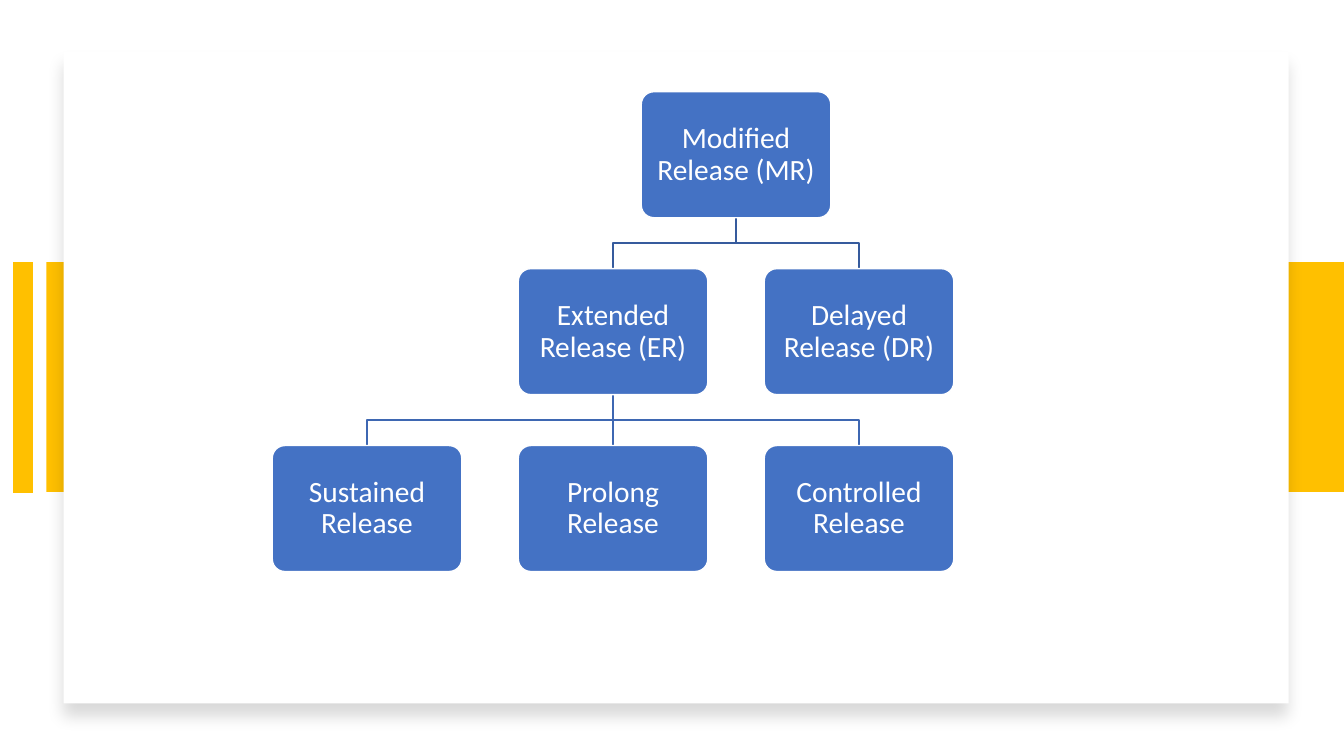
import pptx
import pptx.util
import pptx.dml.color
import pptx.enum.shapes
import pptx.enum.text
import pptx.oxml
import pptx.oxml.ns
from pptx.util import Inches

COLORS = {
    "band": "FFC000",
    "white": "FFFFFF",
    "box": "4472C4",
    "upper_link": "365B9D",
    "lower_link": "3E67B2",
    "shadow": "000000",
}
SHAPES = pptx.enum.shapes.MSO_SHAPE
BOX_W, BOX_H = 1.88, 1.25
LEFT, TOP = 2.7, 0.91
COL_STEP, ROW_STEP = 2.44, 1.755

# name: (text, column, row)
NODES = {
    "MR": ("Modified Release (MR)", 1.5, 0),
    "ER": ("Extended Release (ER)", 1, 1),
    "DR": ("Delayed Release (DR)", 2, 1),
    "sustained": ("Sustained Release", 0, 2),
    "prolong": ("Prolong Release", 1, 2),
    "controlled": ("Controlled Release", 2, 2),
}
LINKS = [
    ("MR", "ER", "upper_link"),
    ("MR", "DR", "upper_link"),
    ("ER", "sustained", "lower_link"),
    ("ER", "prolong", "lower_link"),
    ("ER", "controlled", "lower_link"),
]


def rgb(name):
    return pptx.dml.color.RGBColor.from_string(COLORS[name])


def set_line(sp, color, width):
    sp.line.color.rgb = rgb(color)
    sp.line.width = pptx.util.Pt(width)


def add_filled(s, kind, x, y, w, h, color):
    """Add a preset shape with a plain fill, no line and no shadow."""
    sp = s.shapes.add_shape(kind, Inches(x), Inches(y), Inches(w), Inches(h))
    sp.shadow.inherit = False
    sp.fill.solid()
    sp.fill.fore_color.rgb = rgb(color)
    sp.line.fill.background()
    return sp


def add_straight(s, x1, y1, x2, y2, color, width):
    cx = s.shapes.add_connector(
        pptx.enum.shapes.MSO_CONNECTOR.STRAIGHT,
        Inches(x1), Inches(y1), Inches(x2), Inches(y2))
    set_line(cx, color, width)
    cx._element.spPr.append(pptx.oxml.parse_xml(
        "<a:effectLst %s/>" % pptx.oxml.ns.nsdecls("a")))


def add_soft_shadow(sp):
    effects = sp._element.spPr.find(pptx.oxml.ns.qn("a:effectLst"))
    effects.append(pptx.oxml.parse_xml(
        '<a:outerShdw %s blurRad="%d" dist="%d" dir="5400000" algn="t" rotWithShape="0">'
        '<a:srgbClr val="%s"><a:alpha val="15000"/></a:srgbClr></a:outerShdw>'
        % (pptx.oxml.ns.nsdecls("a"), pptx.util.Pt(11), pptx.util.Pt(10),
           COLORS["shadow"])))


def box_position(name):
    col, row = NODES[name][1:]
    return LEFT + col * COL_STEP, TOP + row * ROW_STEP


def add_box(s, name):
    x, y = box_position(name)
    sp = add_filled(s, SHAPES.ROUNDED_RECTANGLE, x, y, BOX_W, BOX_H, "box")
    sp.adjustments[0] = 0.1
    set_line(sp, "white", 1)
    tf = sp.text_frame
    tf.word_wrap = True
    tf.vertical_anchor = pptx.enum.text.MSO_ANCHOR.MIDDLE
    tf.margin_left = tf.margin_right = Inches(0.12)
    tf.margin_top = tf.margin_bottom = Inches(0.12)
    p = tf.paragraphs[0]
    p.alignment = pptx.enum.text.PP_ALIGN.CENTER
    p.line_spacing = 0.9
    r = p.add_run()
    r.text = NODES[name][0]
    r.font.name = "Calibri"
    r.font.size = pptx.util.Pt(21)
    r.font.color.rgb = rgb("white")


def add_link(s, parent, child, color):
    """Join the bottom of the parent box to the top of the child box."""
    (x1, y1), (x2, y2) = box_position(parent), box_position(child)
    x1, x2, y1 = x1 + BOX_W / 2, x2 + BOX_W / 2, y1 + BOX_H
    if x1 == x2:
        add_straight(s, x1, y1, x2, y2, color, 1)
        return
    mid = (y1 + y2) / 2
    fb = s.shapes.build_freeform(Inches(x1), Inches(y1))
    corners = [(x1, mid), (x2, mid), (x2, y2)]
    fb.add_line_segments([(Inches(x), Inches(y)) for x, y in corners], close=False)
    sp = fb.convert_to_shape()
    sp.shadow.inherit = False
    sp.fill.background()
    set_line(sp, color, 1)


def main():
    prs = pptx.Presentation()
    prs.slide_width, prs.slide_height = Inches(13.33), Inches(7.5)
    s = prs.slides.add_slide(prs.slide_layouts[6])

    add_filled(s, SHAPES.RECTANGLE, 0.46, 2.6, 12.87, 2.28, "band")
    add_straight(s, 0.23, 2.6, 0.23, 4.89, "band", 14)
    card = add_filled(s, SHAPES.RECTANGLE, 0.63, 0.51, 12.15, 6.47, "white")
    add_soft_shadow(card)

    for parent, child, color in LINKS:
        add_link(s, parent, child, color)
    for name in NODES:
        add_box(s, name)
    prs.save("out.pptx")


if __name__ == "__main__":
    main()
